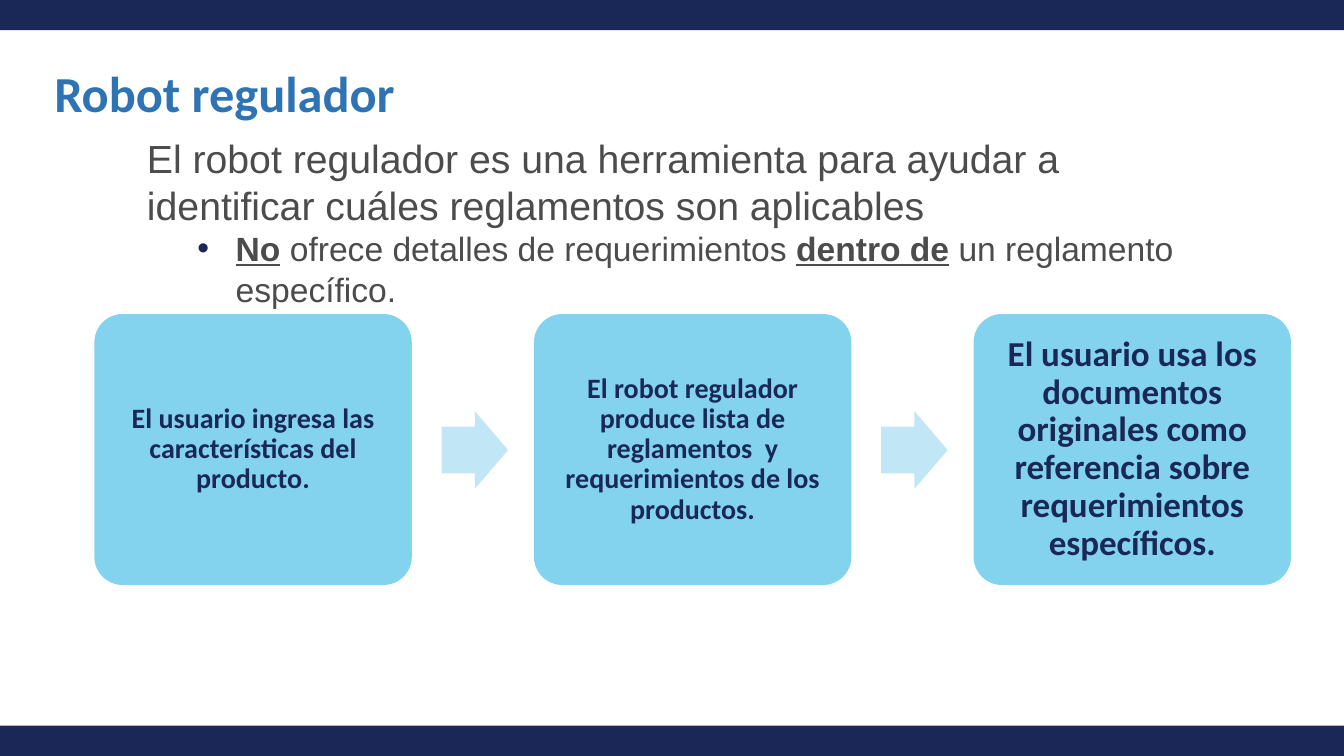
"""Build the slide on the regulation robot and its three steps."""
from dataclasses import dataclass

from lxml import etree
from pptx import Presentation
from pptx import util as u
from pptx.dml.color import RGBColor
from pptx.enum import shapes, text
from pptx.oxml import ns

NAVY = RGBColor(0x1A, 0x28, 0x57)
BLUE = RGBColor(0x2E, 0x74, 0xB5)
GREY = RGBColor(0x4C, 0x4C, 0x4C)
SKY = RGBColor(0x83, 0xD3, 0xEF)
PALE = RGBColor(0xC1, 0xE6, 0xF6)
DOT = RGBColor(0x1D, 0x27, 0x57)
KIND = shapes.MSO_SHAPE
WIDE, HIGH, BAND = 13.33, 7.5, 0.3
LEFT, STEP = 0.95, 4.36


@dataclass
class Box:
    """Place and size in inches."""
    left: float
    top: float
    wide: float
    high: float

    def emu(self) -> list:
        return [u.Inches(n) for n in (self.left, self.top, self.wide, self.high)]


@dataclass
class Stage:
    """Wording, text size and inset of one step."""
    words: str
    size: int = 20
    inset: float = 0.08


STAGES = [
    Stage("El usuario ingresa las características del producto."),
    Stage("El robot regulador produce lista de reglamentos  y "
          "requerimientos de los productos."),
    Stage("El usuario usa los documentos originales como referencia sobre "
          "requerimientos específicos.", 25, 0.1),
]
NOTE = [("No", True), (" ofrece detalles de requerimientos ", False),
        ("dentro de", True), (" un reglamento específico.", False)]


def style(run, size: int, face: str, color: RGBColor, bold: bool = False) -> None:
    font = run.font
    font.size, font.name, font.bold = u.Pt(size), face, bold
    font.color.rgb = color


def add_shape(slide, kind, box: Box, fill: RGBColor, adjs: tuple = ()):
    shape = slide.shapes.add_shape(kind, *box.emu())
    shape.shadow.inherit = False
    shape.fill.solid()
    shape.fill.fore_color.rgb = fill
    shape.line.fill.background()
    for i, adj in enumerate(adjs):
        shape.adjustments[i] = adj
    return shape


def add_frame(slide, box: Box):
    frame = slide.shapes.add_textbox(*box.emu()).text_frame
    frame.word_wrap = True
    return frame


def add_dot(para, left: float, hang: float) -> None:
    props = para._p.get_or_add_pPr()
    props.set("marL", str(u.Inches(left)))
    props.set("indent", str(-u.Inches(hang)))
    color = etree.SubElement(props, ns.qn("a:buClr"))
    etree.SubElement(color, ns.qn("a:srgbClr"), val=str(DOT))
    etree.SubElement(props, ns.qn("a:buFont"), typeface="Arial")
    etree.SubElement(props, ns.qn("a:buChar"), char="•")


def add_title(slide) -> None:
    frame = add_frame(slide, Box(0.44, 0.4, 12.54, 1.04))
    frame.vertical_anchor = text.MSO_ANCHOR.MIDDLE
    frame.text = "Robot regulador"
    style(frame.paragraphs[0].runs[0], 36, "Calibri", BLUE, True)


def add_body(slide) -> None:
    frame = add_frame(slide, Box(1.36, 1.28, 10.7, 2.23))
    frame.text = ("El robot regulador es una herramienta para ayudar a "
                  "identificar cuáles reglamentos son aplicables")
    style(frame.paragraphs[0].runs[0], 28, "Arial", GREY)
    note = frame.add_paragraph()
    note.level = 1
    add_dot(note, 0.88, 0.38)
    for words, strong in NOTE:
        run = note.add_run()
        run.text = words
        style(run, 24, "Arial", GREY, strong)
        run.font.underline = strong


def add_stage(slide, stage: Stage, left: float) -> None:
    card = add_shape(slide, KIND.ROUNDED_RECTANGLE,
                     Box(left, 3.13, 3.12, 2.66), SKY, (0.1,))
    card.line.color.rgb = SKY
    card.line.width = u.Pt(2)
    frame = card.text_frame
    frame.word_wrap = True
    frame.vertical_anchor = text.MSO_ANCHOR.MIDDLE
    frame.margin_left = frame.margin_right = u.Inches(stage.inset)
    frame.margin_top = frame.margin_bottom = u.Inches(stage.inset)
    frame.text = stage.words
    para = frame.paragraphs[0]
    para.alignment = text.PP_ALIGN.CENTER
    para.line_spacing = 0.9
    style(para.runs[0], stage.size, "Calibri", NAVY, True)


def main() -> None:
    deck = Presentation()
    deck.slide_width, deck.slide_height = u.Inches(WIDE), u.Inches(HIGH)
    slide = deck.slides.add_slide(deck.slide_layouts[6])
    for top in (0, HIGH - BAND):
        add_shape(slide, KIND.RECTANGLE, Box(0, top, WIDE, BAND), NAVY)
    add_title(slide)
    add_body(slide)
    for i, stage in enumerate(STAGES):
        left = LEFT + i * STEP
        if i:
            add_shape(slide, KIND.RIGHT_ARROW,
                      Box(left - 0.93, 4.08, 0.66, 0.77), PALE, (0.6, 0.5))
        add_stage(slide, stage, left)
    deck.save("out.pptx")


if __name__ == "__main__":
    main()
